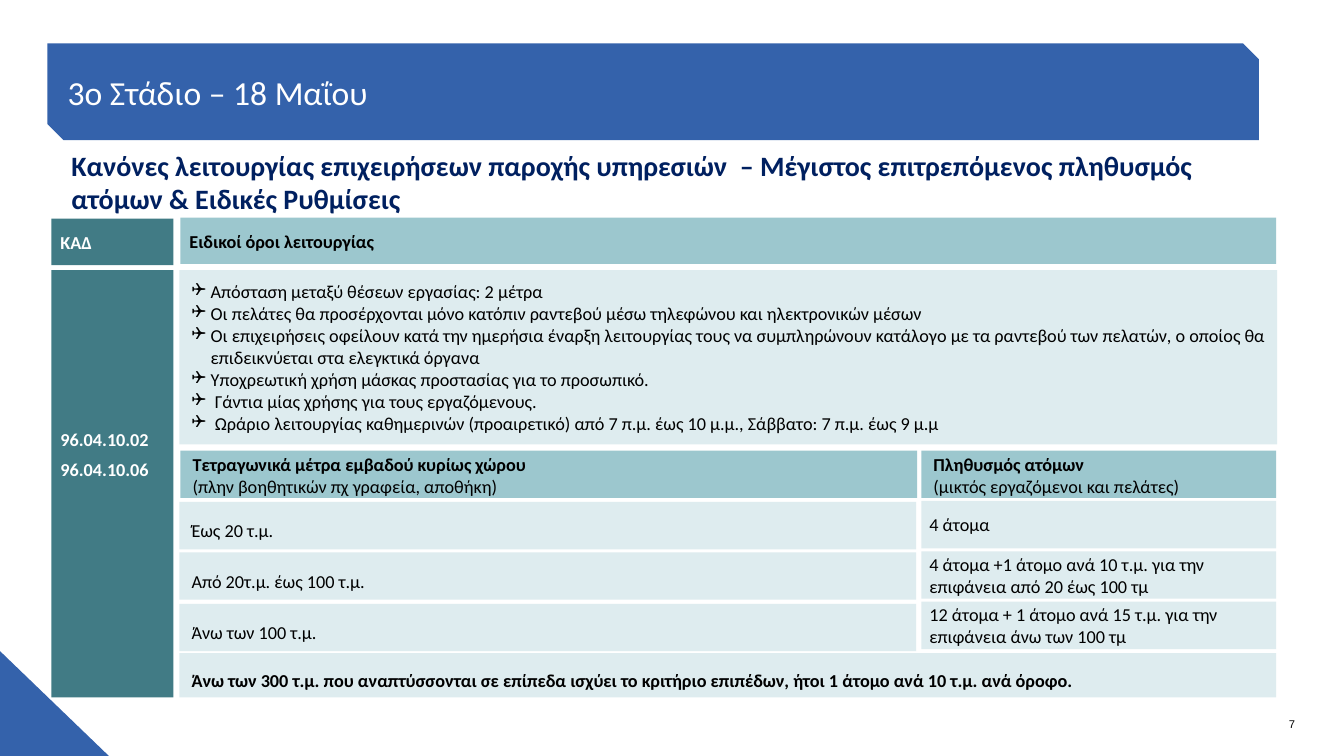
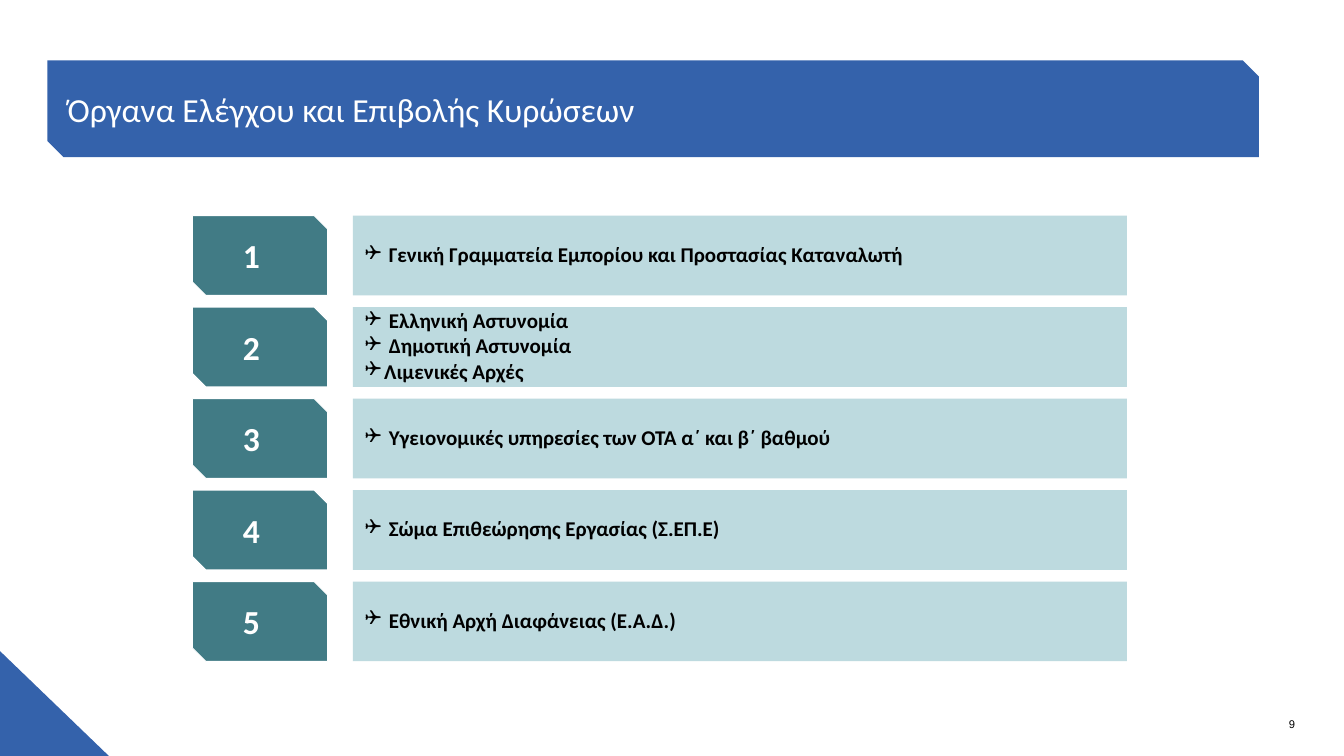
from lxml import etree
from pptx import Presentation
from pptx.dml.color import RGBColor
from pptx.enum.shapes import MSO_SHAPE
from pptx.enum.text import MSO_ANCHOR, PP_ALIGN
from pptx.oxml.ns import qn
from pptx.util import Pt

PX = 9144  # EMU in one px, 100 px to the inch

BLUE = RGBColor(0x34, 0x62, 0xAB)
NAVY = RGBColor(0x00, 0x20, 0x60)
TEAL = RGBColor(0x41, 0x7B, 0x85)
AQUA = RGBColor(0x9C, 0xC7, 0xCE)
MIST = RGBColor(0xBD, 0xDA, 0xDF)
PALE = RGBColor(0xDE, 0xEC, 0xEF)
WHITE = RGBColor(0xFF, 0xFF, 0xFF)
BLACK = RGBColor(0x00, 0x00, 0x00)

RECT = MSO_SHAPE.RECTANGLE
SNIPPED = MSO_SHAPE.SNIP_2_DIAG_RECTANGLE
TRIANGLE = MSO_SHAPE.RIGHT_TRIANGLE
TOP, MIDDLE, BOTTOM = MSO_ANCHOR.TOP, MSO_ANCHOR.MIDDLE, MSO_ANCHOR.BOTTOM
LEFT, CENTER, RIGHT = PP_ALIGN.LEFT, PP_ALIGN.CENTER, PP_ALIGN.RIGHT

# Insets are left, top, right, bottom
TITLE = dict(size=24, color=WHITE, insets=(12, 2, 12, 2))
SUBTITLE = dict(size=20, color=NAVY, bold=True, insets=(10, 5, 10, 5), anchor=TOP)
PAGE_NUMBER = dict(size=8, font="Arial", align=RIGHT, anchor=BOTTOM)
NUMBER = dict(size=24, color=WHITE, bold=True, align=CENTER, insets=(9, 9, 26, 9))
BODY = dict(size=15, bold=True, bullet=True, insets=(12, 0, 8, 3))

CODE_HEAD = dict(fill=TEAL, color=WHITE, bold=True, insets=(9, 6, 6, 6))
CODES = dict(CODE_HEAD, insets=(9, 0, 6, 59), gap=6)
TERMS_HEAD = dict(fill=AQUA, bold=True, insets=(9, 6, 6, 6))
TERMS = dict(fill=PALE, bullet=True, insets=(12, 0, 8, 0))
COLUMN_HEAD = dict(fill=AQUA, bold_first=True, insets=(12, 2, 8, 0))
AREA = dict(fill=PALE, insets=(12, 16, 8, 6))
PEOPLE = dict(fill=PALE, insets=(8, 0, 0, 0))
REMARK = dict(AREA, bold=True)

RULES_TITLE = "3o Στάδιο – 18 Μαΐου"
RULES_SUBTITLE = ("Κανόνες λειτουργίας επιχειρήσεων παροχής υπηρεσιών  – Μέγιστος "
                  "επιτρεπόμενος πληθυσμός ατόμων & Ειδικές Ρυθμίσεις")
LIMITS = [
    ("Έως 20 τ.μ.", "4 άτομα"),
    ("Από 20τ.μ. έως 100 τ.μ.",
     "4 άτομα +1 άτομο ανά 10 τ.μ. για την επιφάνεια από 20 έως 100 τμ"),
    ("Άνω των 100 τ.μ.",
     "12 άτομα + 1 άτομο ανά 15 τ.μ. για την επιφάνεια άνω των 100 τμ"),
]
CODE_X, CODE_W = 51, 121
AREA_X, AREA_W = 178, 731
PEOPLE_X, PEOPLE_W = 914, 352
FULL_W = PEOPLE_X + PEOPLE_W - AREA_X
LIMIT_H = 47
# Position and size, style, paragraphs
PANELS = [
    ((CODE_X, 217, CODE_W, 46), CODE_HEAD, ["ΚΑΔ"]),
    ((CODE_X, 268, CODE_W, 424), CODES, ["96.04.10.02", "96.04.10.06"]),
    ((AREA_X + 1, 216, FULL_W - 1, 46), TERMS_HEAD, ["Ειδικοί όροι λειτουργίας"]),
    ((AREA_X, 268, FULL_W + 1, 173), TERMS, [
        "Απόσταση μεταξύ θέσεων εργασίας: 2 μέτρα",
        "Οι πελάτες θα προσέρχονται μόνο κατόπιν ραντεβού μέσω τηλεφώνου και "
        "ηλεκτρονικών μέσων",
        "Οι επιχειρήσεις οφείλουν κατά την ημερήσια έναρξη λειτουργίας τους να "
        "συμπληρώνουν κατάλογο με τα ραντεβού των πελατών, ο οποίος θα "
        "επιδεικνύεται στα ελεγκτικά όργανα",
        "Υποχρεωτική χρήση μάσκας προστασίας για το προσωπικό.",
        " Γάντια μίας χρήσης για τους εργαζόμενους.",
        " Ωράριο λειτουργίας καθημερινών (προαιρετικό) από 7 π.μ. έως 10 μ.μ., "
        "Σάββατο: 7 π.μ. έως 9 μ.μ",
    ]),
    ((AREA_X + 1, 447, AREA_W, LIMIT_H), COLUMN_HEAD,
     ["Τετραγωνικά μέτρα εμβαδού κυρίως χώρου",
      "(πλην βοηθητικών πχ γραφεία, αποθήκη)"]),
    ((PEOPLE_X, 447, PEOPLE_W, LIMIT_H), COLUMN_HEAD,
     ["Πληθυσμός ατόμων", "(μικτός εργαζόμενοι και πελάτες)"]),
    ((AREA_X, 648, FULL_W, 44), REMARK, [
        "Άνω των 300 τ.μ. που αναπτύσσονται σε επίπεδα ισχύει το κριτήριο "
        "επιπέδων, ήτοι 1 άτομο ανά 10 τ.μ. ανά όροφο."]),
]
for row, (area, people) in enumerate(LIMITS):
    PANELS += [
        ((AREA_X, 498 + row * 101 // 2, AREA_W, LIMIT_H), AREA, [area]),
        ((PEOPLE_X, 497 + row * 50, PEOPLE_W, LIMIT_H), PEOPLE, [people]),
    ]

BODIES_TITLE = "Όργανα Ελέγχου και Επιβολής Κυρώσεων"
BODIES = [
    [" Γενική Γραμματεία Εμπορίου και Προστασίας Καταναλωτή"],
    [" Ελληνική Αστυνομία", " Δημοτική Αστυνομία", "Λιμενικές Αρχές"],
    [" Υγειονομικές υπηρεσίες των ΟΤΑ α΄ και β΄ βαθμού"],
    [" Σώμα Επιθεώρησης Εργασίας (Σ.ΕΠ.Ε)"],
    [" Εθνική Αρχή Διαφάνειας (Ε.Α.Δ.)"],
]
FIRST_BODY, LAST_BODY, BODY_HEIGHT = 214, 577, 79


def emu(*lengths):
    return [int(n * PX) for n in lengths]


def add_bullet(p):
    pPr = p._p.get_or_add_pPr()
    pPr.set("marL", str(19 * PX))
    pPr.set("indent", str(-19 * PX))
    etree.SubElement(pPr, qn("a:buFont")).set("typeface", "Wingdings")
    etree.SubElement(pPr, qn("a:buChar")).set("char", "❑")


def write(tf, paragraphs, size=13, color=BLACK, bold=False, font="Calibri",
          align=LEFT, anchor=MIDDLE, insets=(0, 0, 0, 0), gap=0,
          bullet=False, bold_first=False):
    tf.word_wrap = True
    tf.vertical_anchor = anchor
    for side, inset in zip(("left", "top", "right", "bottom"), emu(*insets)):
        setattr(tf, "margin_" + side, inset)
    for i, text in enumerate(paragraphs):
        p = tf.add_paragraph() if i else tf.paragraphs[0]
        p.alignment = align
        if i and gap:
            p.space_before = Pt(gap)
        if bullet:
            add_bullet(p)
        r = p.add_run()
        r.text = text
        r.font.color.rgb = color
        values = dict(name=font, size=Pt(size), bold=bold or (bold_first and i == 0))
        for name, value in values.items():
            setattr(r.font, name, value)


def add_box(s, kind, at, fill, paragraphs=(), line=None, **style):
    sp = s.shapes.add_shape(kind, *emu(*at))
    sp.shadow.inherit = False
    sp.fill.solid()
    sp.fill.fore_color.rgb = fill
    if line:
        sp.line.color.rgb = line
        sp.line.width = Pt(0.75)
    else:
        sp.line.fill.background()
    if paragraphs:
        write(sp.text_frame, paragraphs, **style)


def add_text(s, at, text, style):
    write(s.shapes.add_textbox(*emu(*at)).text_frame, [text], **style)


def new_slide(prs, title, title_top, number):
    s = prs.slides.add_slide(prs.slide_layouts[6])
    add_box(s, TRIANGLE, (0, 646, 108, 104), BLUE)
    add_box(s, SNIPPED, (47, title_top, 1202, 96), BLUE, [title], **TITLE)
    add_text(s, (1092, 710, 193, 15), number, PAGE_NUMBER)
    return s


def add_bodies(s):
    pitch = (LAST_BODY - FIRST_BODY) / (len(BODIES) - 1)
    for i, names in enumerate(BODIES):
        y = FIRST_BODY + i * pitch
        add_box(s, RECT, (350, y, 768, BODY_HEIGHT), MIST, names, **BODY)
        add_box(s, SNIPPED, (191, y, 134, BODY_HEIGHT), TEAL, [str(i + 1)],
                line=WHITE, **NUMBER)


def main():
    prs = Presentation()
    prs.slide_height = 750 * PX
    prs.slide_width = prs.slide_height * 16 // 9

    s = new_slide(prs, RULES_TITLE, 43, "7")
    for at, style, paragraphs in PANELS:
        add_box(s, RECT, at, paragraphs=paragraphs, **style)
    add_text(s, (61, 142, 1173, 77), RULES_SUBTITLE, SUBTITLE)

    s = new_slide(prs, BODIES_TITLE, 60, "9")
    add_bodies(s)

    prs.save("out.pptx")


if __name__ == "__main__":
    main()
